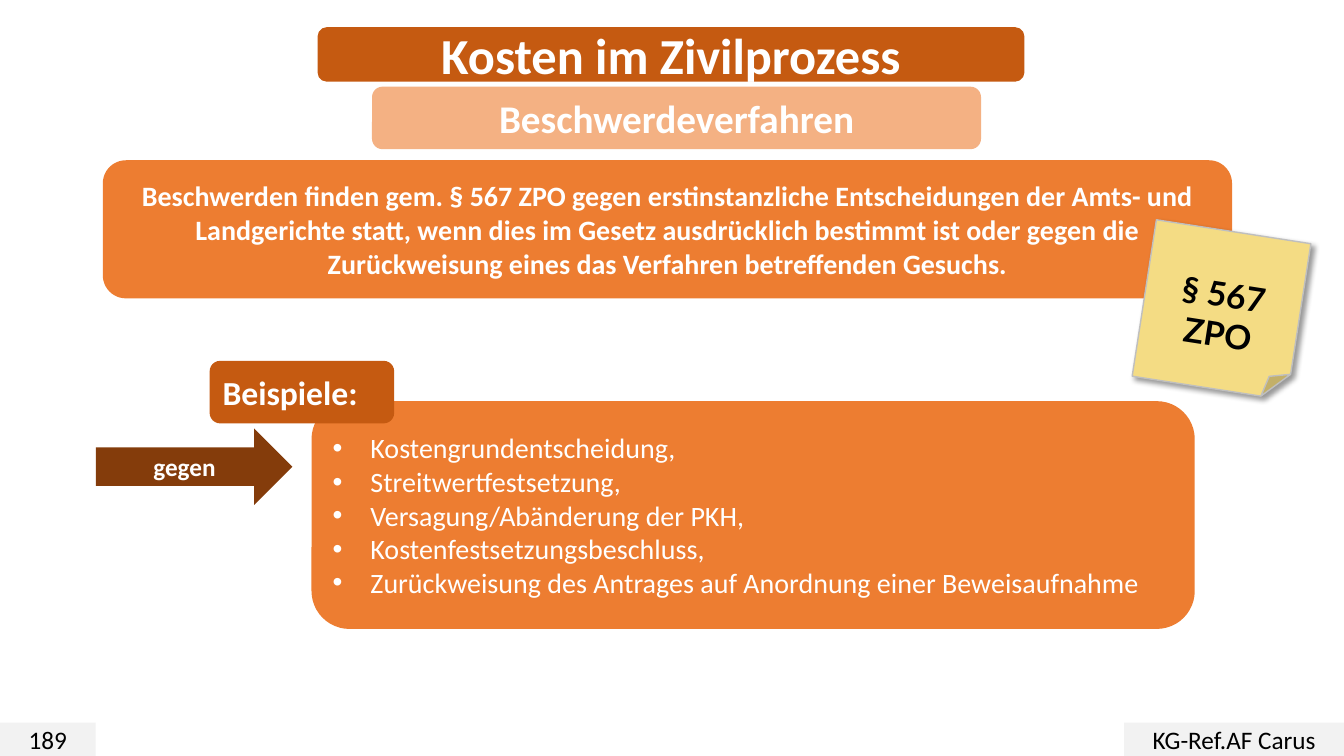
"""Build the slide on appeal proceedings and costs in civil litigation."""
import pptx
import pptx.dml.color
import pptx.enum.shapes
import pptx.enum.text
import pptx.oxml
import pptx.oxml.ns
import pptx.util
from pptx.util import Inches, Pt

RGB = pptx.dml.color.RGBColor
SHAPE = pptx.enum.shapes.MSO_SHAPE
ALIGN = pptx.enum.text.PP_ALIGN

WHITE = RGB(0xFF, 0xFF, 0xFF)
BLACK = RGB(0x00, 0x00, 0x00)
FOOTER_GREY = RGB(0xF2, 0xF2, 0xF2)
EDGE_GREY = RGB(0xBF, 0xBF, 0xBF)
ORANGE = RGB(0xED, 0x7D, 0x31)
DARK_ORANGE = RGB(0xC5, 0x5A, 0x11)
LIGHT_ORANGE = RGB(0xF4, 0xB1, 0x83)
BROWN = RGB(0x84, 0x3C, 0x0B)
STICKY_YELLOW = RGB(0xF4, 0xDC, 0x84)

RULE = ("Beschwerden finden gem. § 567 ZPO gegen erstinstanzliche Entscheidungen der Amts- und "
        "Landgerichte statt, wenn dies im Gesetz ausdrücklich bestimmt ist oder gegen die "
        "Zurückweisung eines das Verfahren betreffenden Gesuchs.")
EXAMPLES = [
    "Kostengrundentscheidung,",
    "Streitwertfestsetzung,",
    "Versagung/Abänderung der PKH,",
    "Kostenfestsetzungsbeschluss,",
    "Zurückweisung des Antrages auf Anordnung einer Beweisaufnahme",
]
BULLET_INDENT = Pt(27)

BOXES = {
    "page": (SHAPE.RECTANGLE, (0, 7.17, 0.95, 0.33), FOOTER_GREY, "189", 18, BLACK, False),
    "author": (SHAPE.RECTANGLE, (11.15, 7.17, 2.18, 0.33), FOOTER_GREY,
               "KG-Ref.AF Carus", 18, BLACK, False),
    "title": (SHAPE.ROUNDED_RECTANGLE, (3.15, 0.27, 7.01, 0.54), DARK_ORANGE,
              "Kosten im Zivilprozess", 36, WHITE, True),
    "subtitle": (SHAPE.ROUNDED_RECTANGLE, (3.69, 0.86, 6.04, 0.62), LIGHT_ORANGE,
                 "Beschwerdeverfahren", 28, WHITE, True),
    "rule": (SHAPE.ROUNDED_RECTANGLE, (1.02, 1.59, 11.2, 1.37), ORANGE, RULE, 20, WHITE, True),
    "sticky": (SHAPE.FOLDED_CORNER, (11.34, 2.29, 1.55, 1.57), STICKY_YELLOW,
               "§ 567 ZPO", 24, BLACK, True),
    "examples": (SHAPE.ROUNDED_RECTANGLE, (3.09, 3.98, 8.76, 2.26), ORANGE,
                 "\n".join(EXAMPLES), 20, WHITE, False),
    "heading": (SHAPE.ROUNDED_RECTANGLE, (2.08, 3.58, 1.83, 0.62), DARK_ORANGE,
                "Beispiele:", 24, WHITE, True),
    "arrow": (SHAPE.RIGHT_ARROW, (0.95, 4.25, 1.95, 0.76), BROWN, "gegen", 18, WHITE, True),
}
LEFT_ALIGNED = ("examples", "heading")
FOOTERS = ("page", "author")


def add_box(slide, kind, at, fill, text, size, color, bold):
    sp = slide.shapes.add_shape(kind, *map(Inches, at))
    sp.shadow.inherit = False
    sp.fill.solid()
    sp.fill.fore_color.rgb = fill
    sp.line.fill.background()
    tf = sp.text_frame
    tf.word_wrap = True
    tf.vertical_anchor = pptx.enum.text.MSO_ANCHOR.MIDDLE
    tf.text = text
    for p in tf.paragraphs:
        p.alignment = ALIGN.CENTER
        for r in p.runs:
            r.font.name = "Calibri"
            r.font.size = Pt(size)
            r.font.bold = bold
            r.font.color.rgb = color
    return sp


def add_bullets(sp):
    ns = pptx.oxml.ns.nsdecls("a")
    for p in sp.text_frame.paragraphs:
        pPr = p._p.get_or_add_pPr()
        pPr.set("marL", str(BULLET_INDENT))
        pPr.set("indent", str(-BULLET_INDENT))
        pPr.append(pptx.oxml.parse_xml(f'<a:buFont {ns} typeface="Arial"/>'))
        pPr.append(pptx.oxml.parse_xml(f'<a:buChar {ns} char="•"/>'))


def style_sticky(sp):
    sp.rotation = 8.8
    sp.line.color.rgb = EDGE_GREY
    sp.line.width = Pt(1)
    sp.text_frame.margin_top = Inches(0.38)
    sp.text_frame.paragraphs[0].runs[0].font.name = "Lato"
    effects = sp._element.spPr.find(pptx.oxml.ns.qn("a:effectLst"))
    effects.append(pptx.oxml.parse_xml(
        f'<a:outerShdw {pptx.oxml.ns.nsdecls("a")} blurRad="{Pt(4)}" dist="{Pt(3)}" '
        f'dir="{45 * 60000}" algn="tl" rotWithShape="0">'
        f'<a:srgbClr val="{BLACK}"><a:alpha val="40000"/></a:srgbClr></a:outerShdw>'))


def main():
    prs = pptx.Presentation()
    prs.slide_width, prs.slide_height = Inches(13.33), Inches(7.5)
    slide = prs.slides.add_slide(prs.slide_layouts[6])
    boxes = {key: add_box(slide, *box) for key, box in BOXES.items()}
    for key in LEFT_ALIGNED:
        for p in boxes[key].text_frame.paragraphs:
            p.alignment = ALIGN.LEFT
    for key in FOOTERS:
        tf = boxes[key].text_frame
        tf.margin_top = tf.margin_bottom = 0
    style_sticky(boxes["sticky"])
    add_bullets(boxes["examples"])
    prs.save("out.pptx")


if __name__ == "__main__":
    main()
